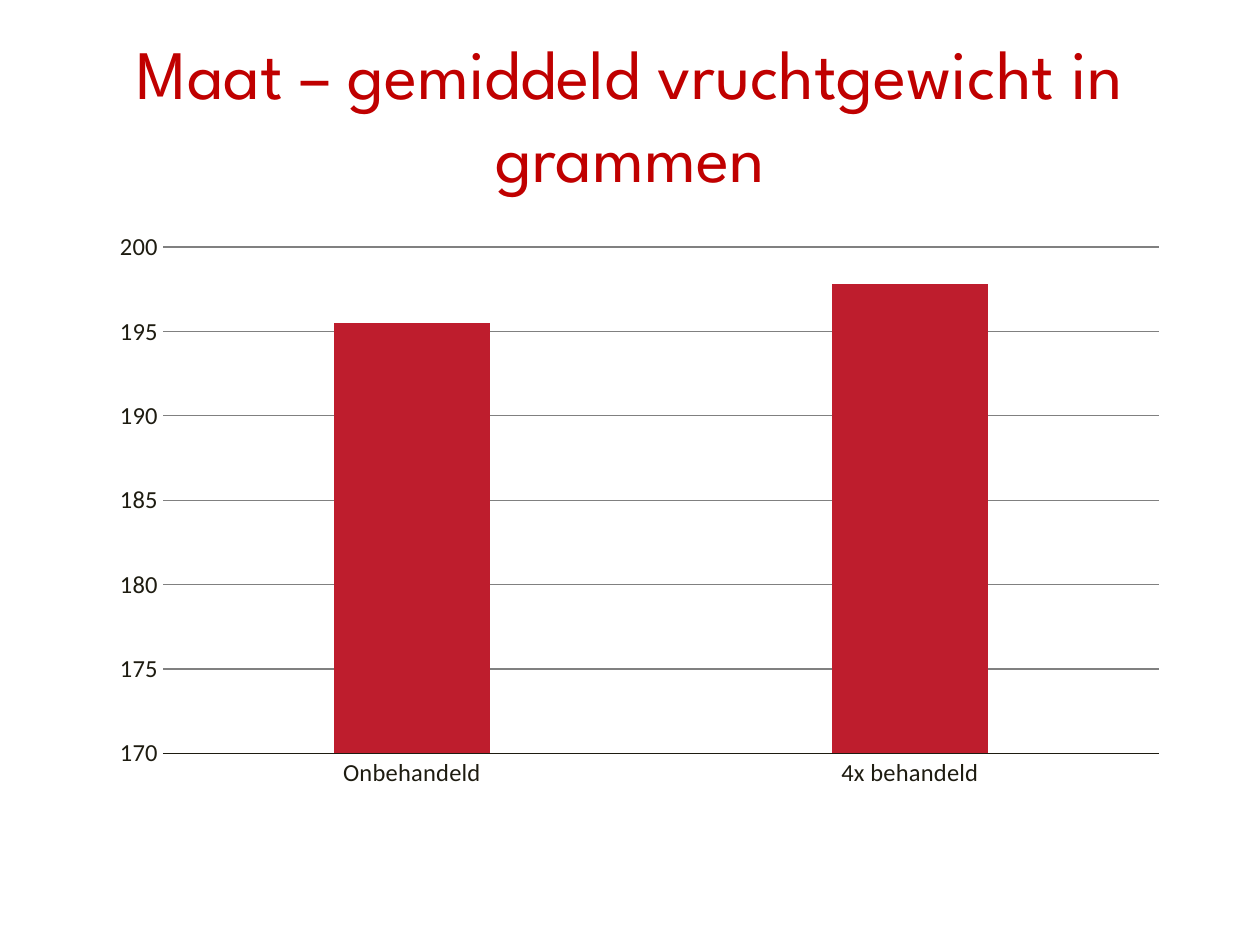
import pptx
import pptx.util
import pptx.chart.data
import pptx.dml.color
import pptx.enum.chart
import pptx.enum.text

SLIDE_WIDTH, SLIDE_HEIGHT = 10, 7.5
HEADING = "Maat – gemiddeld vruchtgewicht in grammen"
HEADING_AREA = (0.05, 0.04, 0.9, 0.16)
WEIGHT_AREA = (0.078, 0.233, 0.859, 0.613)
WEIGHTS = {"Onbehandeld": 195.5, "4x behandeld": 197.8}
RED, BAR_RED, INK, GRID = "C00000", "BE1D2D", "1E1C11", "808080"
HEADING_FONT = {"name": "League Spartan", "size": pptx.util.Pt(39.6)}
CHART_FONT = {"name": "Calibri", "size": pptx.util.Pt(10)}
AXIS_FONT = {"name": "Calibri", "size": pptx.util.Pt(14)}
AXIS_FORMAT = {
    "major_tick_mark": pptx.enum.chart.XL_TICK_MARK.NONE,
    "minor_tick_mark": pptx.enum.chart.XL_TICK_MARK.NONE,
}
SCALE = {"minimum_scale": 170, "maximum_scale": 200, "major_unit": 5}


def rgb(value):
    return pptx.dml.color.RGBColor.from_string(value)


def apply(target, values):
    for key, value in values.items():
        setattr(target, key, value)


def style_font(font, values, color):
    apply(font, values)
    font.color.rgb = rgb(color)


def style_line(line, color):
    line.color.rgb = rgb(color)
    line.width = pptx.util.Pt(0.75)


def place(area):
    sizes = (SLIDE_WIDTH, SLIDE_HEIGHT) * 2
    return [pptx.util.Inches(round(share * size, 2))
            for share, size in zip(area, sizes)]


def add_heading(slide):
    frame = slide.shapes.add_textbox(*place(HEADING_AREA)).text_frame
    apply(frame, {"word_wrap": True,
                  "vertical_anchor": pptx.enum.text.MSO_ANCHOR.MIDDLE})
    paragraph = frame.paragraphs[0]
    paragraph.alignment = pptx.enum.text.PP_ALIGN.CENTER
    heading = paragraph.add_run()
    heading.text = HEADING
    style_font(heading.font, HEADING_FONT, RED)


def add_weights(slide):
    data = pptx.chart.data.CategoryChartData()
    data.categories = list(WEIGHTS)
    data.add_series("Series 1", list(WEIGHTS.values()))
    chart = slide.shapes.add_chart(
        pptx.enum.chart.XL_CHART_TYPE.COLUMN_CLUSTERED,
        *place(WEIGHT_AREA), data).chart
    apply(chart, {"has_legend": False, "has_title": False})
    style_font(chart.font, CHART_FONT, RED)

    bars = chart.plots[0]
    apply(bars, {"gap_width": 219, "overlap": -27, "vary_by_categories": False})
    fill = bars.series[0].format.fill
    fill.solid()
    fill.fore_color.rgb = rgb(BAR_RED)

    for axis in (chart.category_axis, chart.value_axis):
        apply(axis, AXIS_FORMAT)
        style_font(axis.tick_labels.font, AXIS_FONT, INK)
    style_line(chart.category_axis.format.line, INK)
    apply(chart.value_axis, SCALE)
    chart.value_axis.format.line.fill.background()
    style_line(chart.value_axis.major_gridlines.format.line, GRID)


def main():
    deck = pptx.Presentation()
    apply(deck, {"slide_width": pptx.util.Inches(SLIDE_WIDTH),
                 "slide_height": pptx.util.Inches(SLIDE_HEIGHT)})
    slide = deck.slides.add_slide(deck.slide_layouts[6])
    add_heading(slide)
    add_weights(slide)
    deck.save("out.pptx")


if __name__ == "__main__":
    main()
